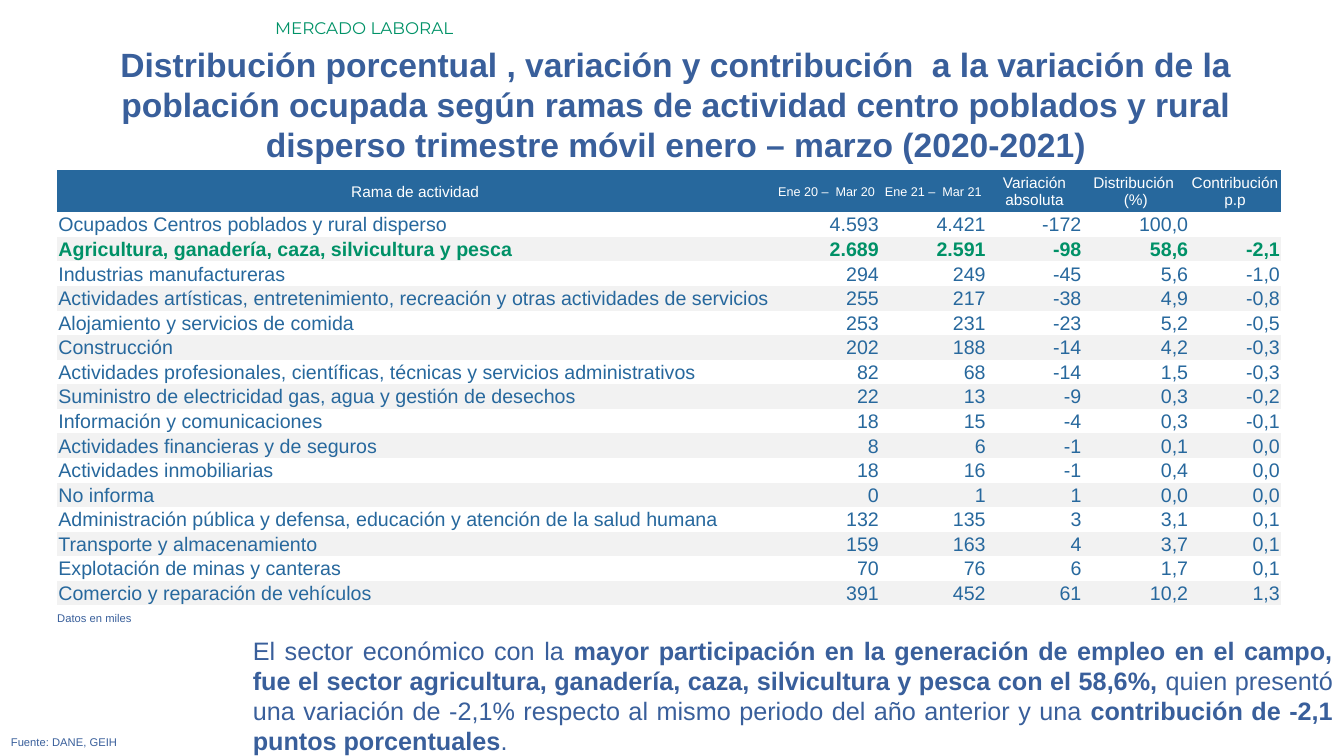
from lxml.etree import SubElement
from pptx import Presentation
from pptx.dml.color import RGBColor
from pptx.enum.text import MSO_ANCHOR, MSO_AUTO_SIZE, PP_ALIGN
from pptx.oxml.ns import qn
from pptx.util import Pt

COLORS = {
    "blue": "395F9B",
    "table_blue": "27689D",
    "green": "009267",
    "row_green": "009167",
    "band": "F2F2F2",
    "white": "FFFFFF",
}
NO_GRID_STYLE = "{2D5ABB26-0587-4C30-8999-92F81FD0307C}"


def add_span(para, text, size, color, bold=False, font="Arial"):
    span = para.add_run()
    span.text = text
    span.font.name = font
    span.font.size = Pt(size)
    span.font.bold = bold
    span.font.color.rgb = RGBColor.from_string(COLORS[color])


def place_text(box, left, top, width, height, align):
    box.left, box.top, box.width, box.height = Pt(left), Pt(top), Pt(width), Pt(height)
    frame = box.text_frame
    frame.word_wrap = True
    frame.auto_size = MSO_AUTO_SIZE.SHAPE_TO_FIT_TEXT
    frame.vertical_anchor = MSO_ANCHOR.TOP
    para = frame.paragraphs[0]
    para.alignment = align
    return para


deck = Presentation()
deck.slide_width, deck.slide_height = Pt(960), Pt(540)
page = deck.slides.add_slide(deck.slide_layouts[5])

title = place_text(page.shapes.title, 32.4, 27.4, 900.7, 94.3, PP_ALIGN.CENTER)
add_span(
    title,
    "Distribución porcentual , variación y contribución  a la variación de la población "
    "ocupada según ramas de actividad centro poblados y rural disperso trimestre móvil "
    "enero – marzo (2020-2021)",
    24, "blue", True,
)

captions = [
    ("MERCADO LABORAL", 189.4, 9.4, 770, 21.6, PP_ALIGN.LEFT, 12, "green", "Montserrat"),
    ("Fuente: DANE, GEIH", 0.7, 522, 929.5, 17.3, PP_ALIGN.JUSTIFY, 8, "blue", "Arial"),
    ("Datos en miles", 33.8, 433.4, 926, 17.3, PP_ALIGN.JUSTIFY, 8, "blue", "Arial"),
]
for text, left, top, width, height, align, size, color, font in captions:
    box = page.shapes.add_textbox(0, 0, 0, 0)
    para = place_text(box, left, top, width, height, align)
    add_span(para, text, size, color, font=font)

summary_box = page.shapes.add_textbox(0, 0, 0, 0)
summary = place_text(summary_box, 173.5, 450, 785.7, 94.3, PP_ALIGN.JUSTIFY)
for text, bold in [
    ("El sector económico con la ", False),
    ("mayor participación en la generación de empleo en el campo, fue el sector agricultura, "
     "ganadería, caza, silvicultura y pesca con el 58,6%, ", True),
    ("quien presentó una variación de -2,1% respecto al mismo periodo del año anterior y una ",
     False),
    ("contribución de -2,1 puntos porcentuales", True),
    (".", False),
]:
    add_span(summary, text, 18, "blue", bold)

rows = [
    ("Rama de actividad", "Ene 20 –  Mar 20", "Ene 21 –  Mar 21", "Variación\nabsoluta",
     "Distribución \n(%)", "Contribución \np.p"),
    ("Ocupados Centros poblados y rural disperso", "4.593", "4.421", "-172", "100,0", ""),
    ("Agricultura, ganadería, caza, silvicultura y pesca",
     "2.689", "2.591", "-98", "58,6", "-2,1"),
    ("Industrias manufactureras", "294", "249", "-45", "5,6", "-1,0"),
    ("Actividades artísticas, entretenimiento, recreación y otras actividades de servicios",
     "255", "217", "-38", "4,9", "-0,8"),
    ("Alojamiento y servicios de comida", "253", "231", "-23", "5,2", "-0,5"),
    ("Construcción", "202", "188", "-14", "4,2", "-0,3"),
    ("Actividades profesionales, científicas, técnicas y servicios administrativos",
     "82", "68", "-14", "1,5", "-0,3"),
    ("Suministro de electricidad gas, agua y gestión de desechos",
     "22", "13", "-9", "0,3", "-0,2"),
    ("Información y comunicaciones", "18", "15", "-4", "0,3", "-0,1"),
    ("Actividades financieras y de seguros", "8", "6", "-1", "0,1", "0,0"),
    ("Actividades inmobiliarias", "18", "16", "-1", "0,4", "0,0"),
    ("No informa", "0", "1", "1", "0,0", "0,0"),
    ("Administración pública y defensa, educación y atención de la salud humana",
     "132", "135", "3", "3,1", "0,1"),
    ("Transporte y almacenamiento", "159", "163", "4", "3,7", "0,1"),
    ("Explotación de minas y canteras", "70", "76", "6", "1,7", "0,1"),
    ("Comercio y reparación de vehículos", "391", "452", "61", "10,2", "1,3"),
]
column_widths = [511.2, 76.3, 76.3, 68.4, 76.3, 65.5]
header_height, row_height = 30, 17.57
table_frame = page.shapes.add_table(
    len(rows), len(column_widths), Pt(41), Pt(121.7), Pt(sum(column_widths)),
    Pt(header_height + row_height * (len(rows) - 1)),
)
table = table_frame.table
table.first_row = table.horz_banding = False
for style in table_frame._element.iter(qn("a:tableStyleId")):
    style.text = NO_GRID_STYLE
for column, width in zip(table.columns, column_widths):
    column.width = Pt(width)

for row_index, values in enumerate(rows):
    is_header = row_index == 0
    is_farming = row_index == 2
    table.rows[row_index].height = Pt(header_height if is_header else row_height)
    for column_index, value in enumerate(values):
        cell = table.cell(row_index, column_index)
        cell.vertical_anchor = MSO_ANCHOR.MIDDLE
        cell.margin_left = cell.margin_right = cell.margin_top = Pt(0.72)
        cell.margin_bottom = 0
        if row_index % 2:
            cell.fill.background()
        else:
            cell.fill.solid()
            fill_color = COLORS["table_blue" if is_header else "band"]
            cell.fill.fore_color.rgb = RGBColor.from_string(fill_color)
        if is_header:
            size, color, align = 9 if column_index in (1, 2) else 11, "white", PP_ALIGN.CENTER
        else:
            size, color = 14, "row_green" if is_farming else "table_blue"
            align = PP_ALIGN.RIGHT if column_index else PP_ALIGN.LEFT
        frame = cell.text_frame
        for line_index, line in enumerate(value.split("\n")):
            para = frame.add_paragraph() if line_index else frame.paragraphs[0]
            para.alignment = align
            if line:
                add_span(para, line, size, color, is_farming)
            else:
                SubElement(para._p, qn("a:endParaRPr"), sz=str(size * 100))

deck.save("out.pptx")
